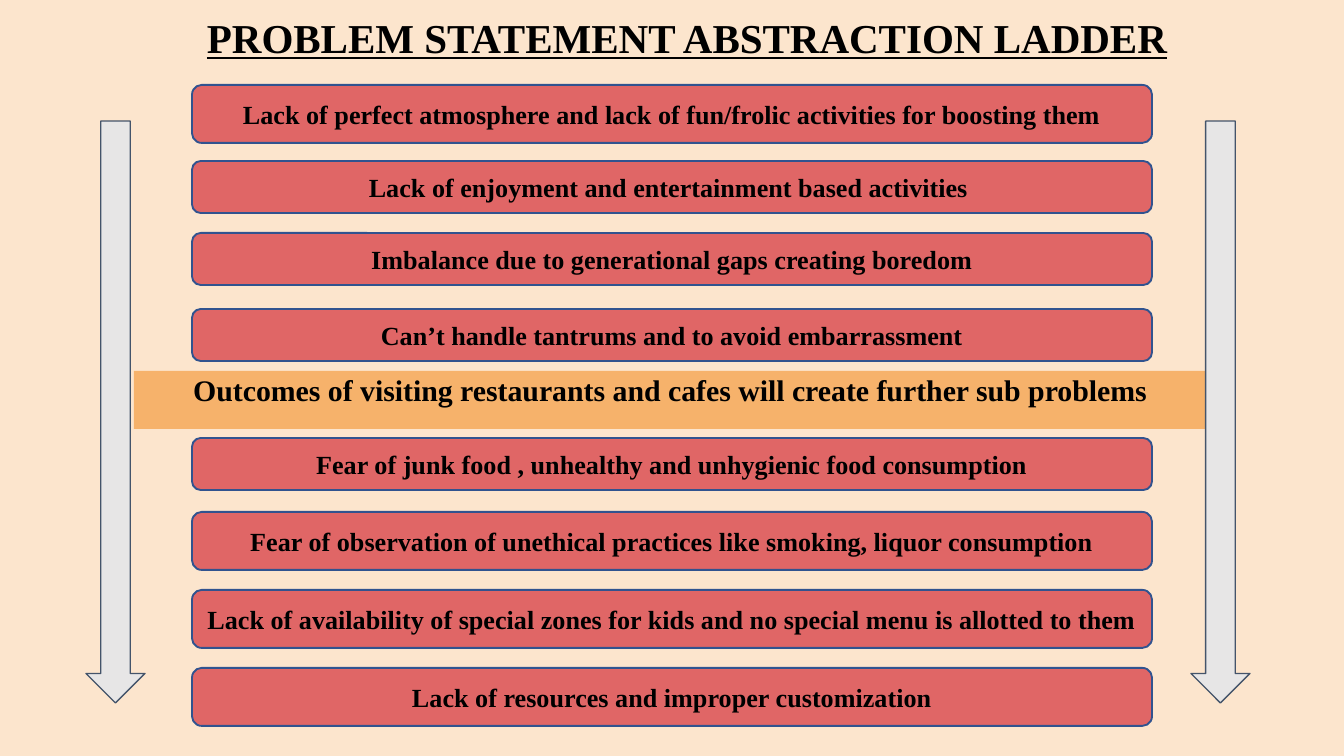
from pptx import Presentation
from pptx.dml.color import RGBColor
from pptx.enum.shapes import MSO_SHAPE
from pptx.enum.text import MSO_ANCHOR, MSO_AUTO_SIZE, PP_ALIGN
from pptx.util import Emu, Pt

RECT = MSO_SHAPE.RECTANGLE
ROUND = MSO_SHAPE.ROUNDED_RECTANGLE
DOWN = MSO_SHAPE.DOWN_ARROW
TOP, MIDDLE, BOTTOM = MSO_ANCHOR.TOP, MSO_ANCHOR.MIDDLE, MSO_ANCHOR.BOTTOM
CENTER = PP_ALIGN.CENTER
NO_FIT = MSO_AUTO_SIZE.NONE

SCALE = 914400 / 134.4
WIDTH, HEIGHT = 1344, 756
RUNGS = [
    (85, 58, "Lack of perfect atmosphere and lack of fun/frolic activities for boosting them"),
    (161, 52, "Lack of enjoyment and entertainment based activities "),
    (233, 52, "Imbalance due to generational gaps creating boredom"),
    (309, 52, "Can’t handle tantrums and to avoid embarrassment"),
    (438, 52, "Fear of junk food , unhealthy and unhygienic food consumption"),
    (512, 58, "Fear of observation of unethical practices like smoking, liquor consumption"),
    (590, 58, "Lack of availability of special zones for kids and no special menu is allotted to them"),
    (668, 58, "Lack of resources and improper customization"),
]


def px(size):
    return Emu(round(size * SCALE))


def tint(code):
    return RGBColor.from_string(code)


class Board:
    font = "Times New Roman"
    ink = "000000"

    def __init__(self, deck, back):
        self.slide = deck.slides.add_slide(deck.slide_layouts[5])
        fill = self.slide.background.fill
        fill.solid()
        fill.fore_color.rgb = tint(back)

    def label(self, shape, text, size, anchor, space=1.0, under=False):
        frame = shape.text_frame
        frame.auto_size = NO_FIT
        frame.word_wrap = True
        frame.vertical_anchor = anchor
        frame.margin_left = frame.margin_right = px(10)
        frame.margin_top = frame.margin_bottom = px(5)
        para = frame.paragraphs[0]
        para.alignment = CENTER
        para.line_spacing = space
        run = para.add_run()
        run.text = text
        font = run.font
        font.name = self.font
        font.size = Pt(size)
        font.bold = True
        font.underline = under
        font.color.rgb = tint(self.ink)

    def title(self, text, x, y, w, h):
        shape = self.slide.shapes.title
        shape.left, shape.top, shape.width, shape.height = map(px, (x, y, w, h))
        self.label(shape, text, 22, BOTTOM, 0.9, True)

    def shape(self, kind, x, y, w, h, fill, line=None, weight=1):
        shape = self.slide.shapes.add_shape(kind, *map(px, (x, y, w, h)))
        shape.shadow.inherit = False
        shape.fill.solid()
        shape.fill.fore_color.rgb = tint(fill)
        if line:
            shape.line.color.rgb = tint(line)
            shape.line.width = Pt(weight)
        else:
            shape.line.fill.background()
        return shape

    def band(self, text, x, y, w, h):
        shape = self.shape(RECT, x, y, w, h, "F6B26B")
        self.label(shape, text, 16, TOP, 0.9)

    def rung(self, text, y, h):
        shape = self.shape(ROUND, 192, y, 960, h, "E06666", "31538F")
        self.label(shape, text, 14, MIDDLE)

    def arrow(self, x):
        self.shape(DOWN, x, 121, 59, 582, "E7E6E6", "44546A", 0.75)


def main():
    deck = Presentation()
    deck.slide_width, deck.slide_height = px(WIDTH), px(HEIGHT)
    board = Board(deck, "FCE5CD")
    board.title("PROBLEM STATEMENT ABSTRACTION LADDER", 183, 15, 1008, 52)
    board.band("Outcomes of visiting restaurants and cafes will create further sub problems",
               134, 371, 1073, 58)
    for y, h, text in RUNGS:
        board.rung(text, y, h)
    for x in (86, 1191):
        board.arrow(x)
    deck.save("out.pptx")


if __name__ == "__main__":
    main()
